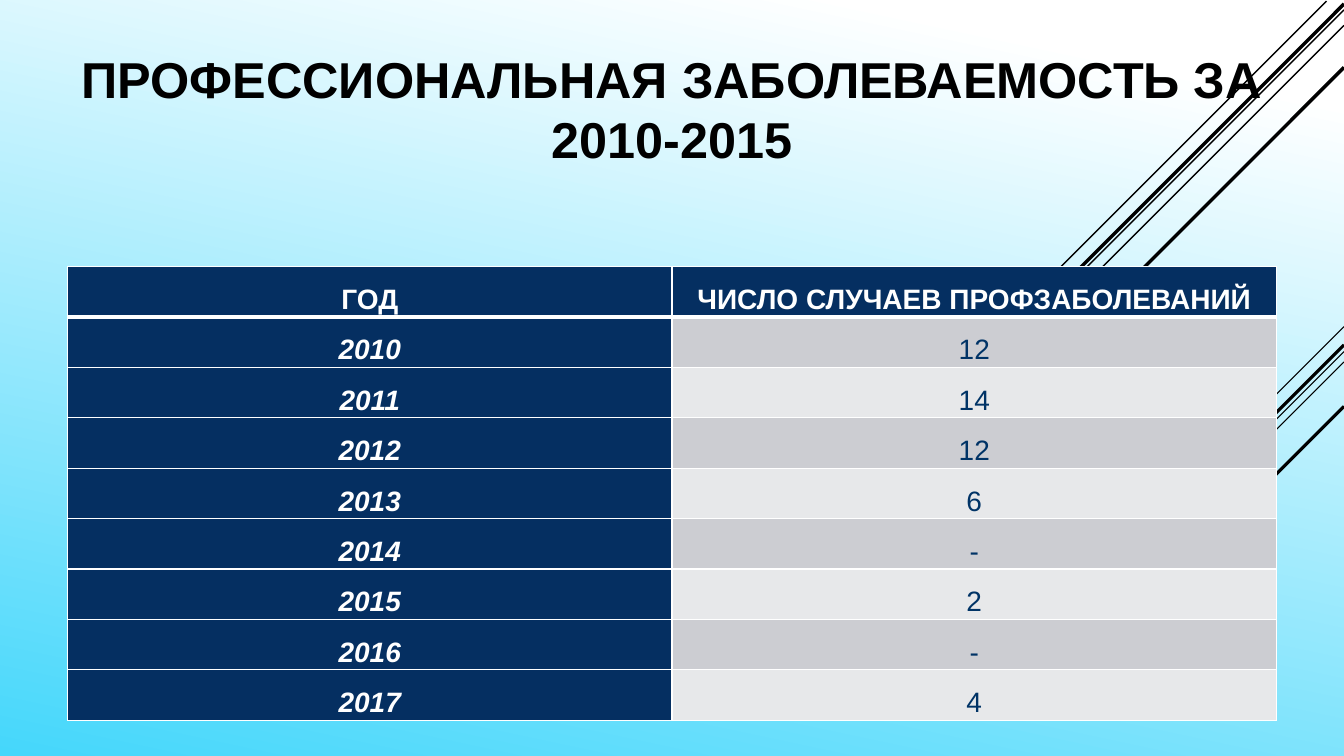
from lxml import etree
from pptx import Presentation
from pptx.dml.color import RGBColor
from pptx.enum.shapes import MSO_CONNECTOR
from pptx.enum.text import MSO_ANCHOR, MSO_AUTO_SIZE, PP_ALIGN
from pptx.oxml.ns import qn
from pptx.util import Cm, Pt

FONT = "Arial"
BLACK = RGBColor(0x00, 0x00, 0x00)
WHITE = RGBColor(0xFF, 0xFF, 0xFF)
SKY = RGBColor(0x45, 0xD7, 0xFB)
NAVY = RGBColor(0x05, 0x2F, 0x61)
VALUE_BLUE = RGBColor(0x00, 0x33, 0x66)
BANDS = (RGBColor(0xCC, 0xCD, 0xD2), RGBColor(0xE7, 0xE8, 0xEA))

SLIDE_WIDTH, SLIDE_HEIGHT = Cm(33.87), Cm(19.05)
ROW_HEIGHT = Cm(1.27)

TITLE_LINES = ["ПРОФЕССИОНАЛЬНАЯ ЗАБОЛЕВАЕМОСТЬ ЗА", "2010-2015"]
HEADINGS = ("ГОД", "ЧИСЛО СЛУЧАЕВ ПРОФЗАБОЛЕВАНИЙ")
CASES = ["12", "14", "12", "6", "-", "2", "-", "4"]
ROWS = [HEADINGS] + [(str(year), count) for year, count in enumerate(CASES, 2010)]

# Diagonals: distance from the right edge, top, drop (cm), width (pt)
DIAGONALS = [
    (0, 8.23, 2.54, 0.75), (0, 8.86, 8.28, 0.75), (0, 9.12, 5.28, 0.75),
    (0, 8.69, 4.85, 2.25), (0, 10.24, 3.53, 2.25),
    (0.44, 0.03, 10.59, 1), (0, 0.25, 16.89, 1), (0, 0.64, 13.77, 1),
    (0, 0.1, 13.46, 2.5), (0, 1.7, 12.07, 2.5),
]


def paint_background(slide):
    fill = slide.background.fill
    fill.gradient()
    fill.gradient_angle = 258
    for stop, position, color in zip(fill.gradient_stops, (0.1, 1), (WHITE, SKY)):
        stop.position = position
        stop.color.rgb = color


def add_diagonals(slide, right_edge):
    """Draw 45-degree lines falling to the left from the right edge."""
    for inset, top, drop, width in DIAGONALS:
        start = right_edge - Cm(inset)
        line = slide.shapes.add_connector(
            MSO_CONNECTOR.STRAIGHT, start, Cm(top), start - Cm(drop), Cm(top + drop))
        line.line.color.rgb = BLACK
        line.line.width = Pt(width)
        etree.SubElement(line.element.spPr, qn("a:effectLst"))


def add_title(slide, left, top, width, height):
    title = slide.shapes.title
    title.left, title.top, title.width, title.height = left, top, width, height
    title.element.getparent().append(title.element)  # in front of the diagonals
    frame = title.text_frame
    frame.text = "\n".join(TITLE_LINES)
    frame.word_wrap = True
    frame.auto_size = MSO_AUTO_SIZE.NONE
    frame.vertical_anchor = MSO_ANCHOR.MIDDLE
    for paragraph in frame.paragraphs:
        paragraph.alignment = PP_ALIGN.CENTER
        font = paragraph.font
        font.name, font.size, font.bold = FONT, Pt(36), True
        font.color.rgb = BLACK


def set_borders(cell, top, bottom):
    """Give the cell white borders; top and bottom are widths in points."""
    properties = cell._tc.get_or_add_tcPr()
    sides = (("L", 1), ("R", 1), ("T", top), ("B", bottom))
    for index, (side, width) in enumerate(sides):
        border = etree.Element(qn(f"a:ln{side}"), w=str(Pt(width)))
        fill = etree.SubElement(border, qn("a:solidFill"))
        etree.SubElement(fill, qn("a:srgbClr"), val=str(WHITE))
        properties.insert(index, border)


def format_cell(cell, text, row, column):
    is_header = row == 0
    is_dark = is_header or column == 0
    cell.text = text
    cell.margin_top = cell.margin_bottom = 0
    cell.vertical_anchor = MSO_ANCHOR.MIDDLE
    cell.fill.solid()
    cell.fill.fore_color.rgb = NAVY if is_dark else BANDS[(row - 1) % 2]
    set_borders(cell, top=3 if row == 1 else 1, bottom=3 if is_header else 1)

    paragraph = cell.text_frame.paragraphs[0]
    paragraph.alignment = PP_ALIGN.CENTER
    paragraph.line_spacing = 1.5
    paragraph.space_after = Pt(6)
    font = paragraph.font
    font.name, font.size = FONT, Pt(20)
    font.bold = is_dark
    font.italic = is_dark and not is_header
    font.color.rgb = WHITE if is_dark else VALUE_BLUE


def add_cases_table(slide, left, top, width):
    table = slide.shapes.add_table(
        len(ROWS), len(HEADINGS), left, top, width, ROW_HEIGHT * len(ROWS)).table
    for row, texts in enumerate(ROWS):
        table.rows[row].height = ROW_HEIGHT
        for column, text in enumerate(texts):
            format_cell(table.cell(row, column), text, row, column)


def main():
    presentation = Presentation()
    presentation.slide_width = SLIDE_WIDTH
    presentation.slide_height = SLIDE_HEIGHT
    slide = presentation.slides.add_slide(presentation.slide_layouts[5])

    margin = Cm(1.7)
    content_width = SLIDE_WIDTH - 2 * margin
    paint_background(slide)
    add_diagonals(slide, SLIDE_WIDTH)
    add_title(slide, margin, Cm(1.07), content_width, Cm(3.33))
    add_cases_table(slide, margin, Cm(6.72), content_width)
    presentation.save("out.pptx")


if __name__ == "__main__":
    main()
